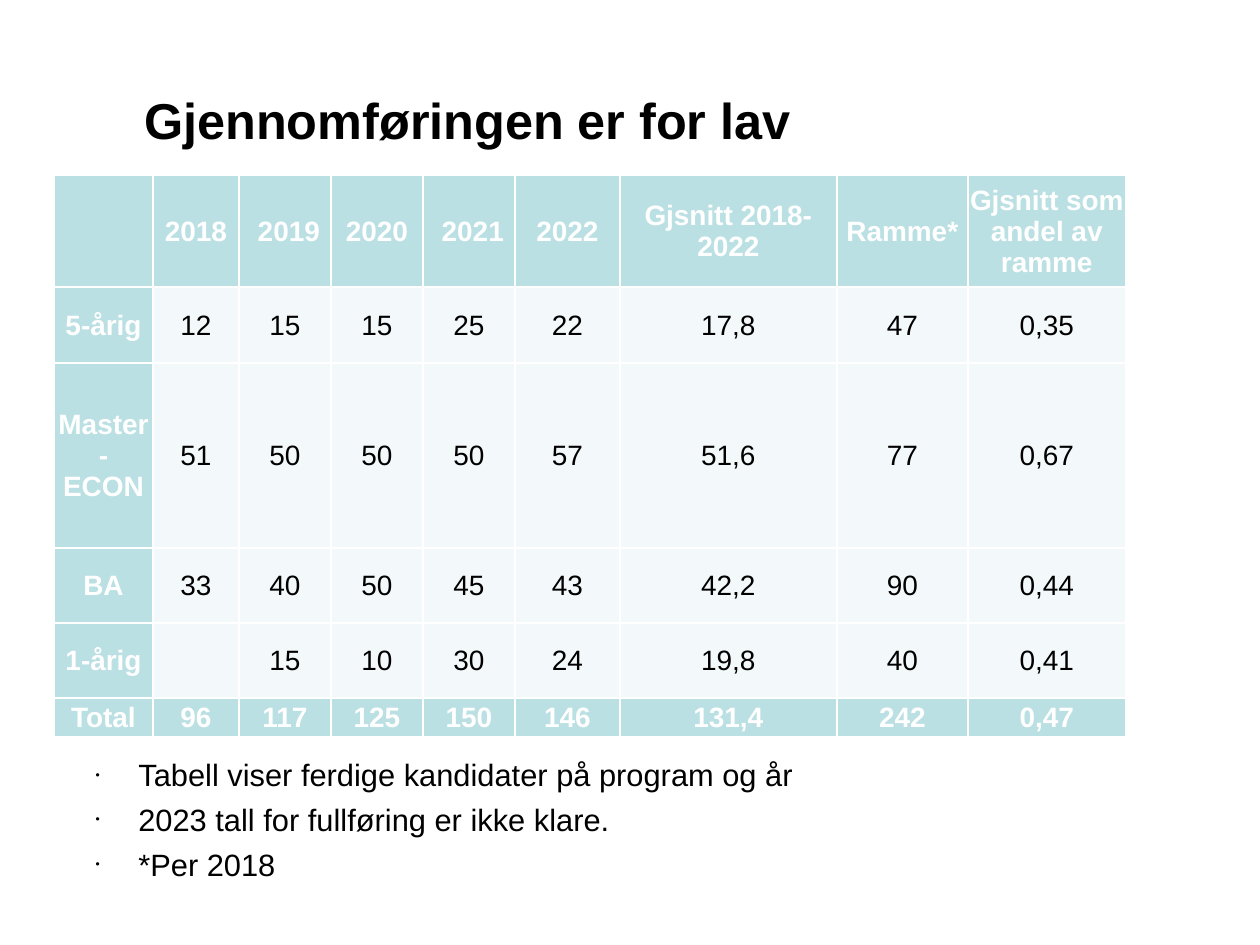
from dataclasses import dataclass
from itertools import product

from lxml import etree
from pptx import Presentation, util as u
from pptx.dml import color
from pptx.enum import text
from pptx.oxml import ns

EMU_PER_PX = u.Inches(1) / 126
FONT = "Arial"
COLORS = {"ink": "000000", "paper": "FFFFFF", "head": "BBE0E3", "body": "F3F9FA"}

COLUMN_WIDTHS = [99, 86, 92, 92, 92, 105, 217, 131, 158]
ROW_HEIGHTS = [112, 76, 185, 75, 75, 39]
ROWS = [
    ["", "2018", " 2019", "2020", " 2021", "2022", "Gjsnitt 2018-2022", "Ramme*",
     "Gjsnitt som andel av ramme"],
    ["5-årig", "12", "15", "15", "25", "22", "17,8", "47", "0,35"],
    ["Master - ECON", "51", "50", "50", "50", "57", "51,6", "77", "0,67"],
    ["BA", "33", "40", "50", "45", "43", "42,2", "90", "0,44"],
    ["1-årig", "", "15", "10", "30", "24", "19,8", "40", "0,41"],
    ["Total", "96", "117", "125", "150", "146", "131,4", "242", "0,47"],
]
LAST_ROW = len(ROWS) - 1


@dataclass
class TextBlock:
    left: int
    top: int
    width: int
    height: int
    lines: list[str]
    size: float
    bold: bool = False
    inset_top: int = 6
    bullet_indent: int = 0


TITLE = TextBlock(132, 86, 1061, 179, ["Gjennomføringen er for lav"], 28.8,
                  bold=True, inset_top=3)
NOTES = TextBlock(83, 750, 1158, 180, [
    "Tabell viser ferdige kandidater på program og år",
    "2023 tall for fullføring er ikke klare.",
    "*Per 2018",
], 17.6, bullet_indent=43)


def px(length: int) -> u.Emu:
    return u.Emu(round(length * EMU_PER_PX))


def rgb(name: str) -> color.RGBColor:
    return color.RGBColor.from_string(COLORS[name])


def add_element(parent, tag: str, **attributes: str):
    return etree.SubElement(parent, ns.qn(tag), attributes)


def set_font(para, size: float, ink: str, bold: bool) -> None:
    para.font.name = FONT
    para.font.size = u.Pt(size)
    para.font.bold = bold
    para.font.color.rgb = rgb(ink)


def add_bullet(para, indent: int) -> None:
    properties = para._p.get_or_add_pPr()
    properties.set("marL", str(px(indent)))
    properties.set("indent", str(-px(indent)))
    bullet_color = add_element(properties, "a:buClr")
    add_element(bullet_color, "a:srgbClr", val=COLORS["ink"])
    add_element(properties, "a:buSzPct", val="25000")
    add_element(properties, "a:buFont", typeface=FONT)
    add_element(properties, "a:buChar", char="●")


def draw_text(page, block: TextBlock) -> None:
    box = page.shapes.add_textbox(px(block.left), px(block.top),
                                  px(block.width), px(block.height))
    frame = box.text_frame
    frame.word_wrap = True
    frame.margin_top = px(block.inset_top)
    frame.text = "\n".join(block.lines)
    for index, para in enumerate(frame.paragraphs):
        if block.bullet_indent:
            add_bullet(para, block.bullet_indent)
        if index:
            para.space_before = u.Pt(4.5)
        set_font(para, block.size, "ink", block.bold)


def add_borders(cell, row: int) -> None:
    widths = {"L": 1, "R": 1,
              "T": 1.5 if row in (1, LAST_ROW) else 1,
              "B": 1.5 if row in (0, LAST_ROW - 1) else 1}
    properties = cell._tc.get_or_add_tcPr()
    for side, width in widths.items():
        line = add_element(properties, f"a:ln{side}", w=str(u.Pt(width)))
        fill = add_element(line, "a:solidFill")
        add_element(fill, "a:srgbClr", val=COLORS["paper"])


def draw_table(page, left: int, top: int) -> None:
    frame = page.shapes.add_table(len(ROW_HEIGHTS), len(COLUMN_WIDTHS), px(left), px(top),
                                  px(sum(COLUMN_WIDTHS)), px(sum(ROW_HEIGHTS)))
    table = frame.table
    table.horz_banding = False
    for column, width in zip(table.columns, COLUMN_WIDTHS):
        column.width = px(width)
    for row, height in zip(table.rows, ROW_HEIGHTS):
        row.height = px(height)
    for row, column in product(range(len(ROW_HEIGHTS)), range(len(COLUMN_WIDTHS))):
        cell = table.cell(row, column)
        heading = row in (0, LAST_ROW) or column == 0
        add_borders(cell, row)
        cell.fill.solid()
        cell.fill.fore_color.rgb = rgb("head" if heading else "body")
        cell.margin_left = cell.margin_right = cell.margin_top = px(1)
        cell.margin_bottom = 0
        cell.vertical_anchor = text.MSO_ANCHOR.MIDDLE
        cell.text = ROWS[row][column]
        para = cell.text_frame.paragraphs[0]
        para.alignment = text.PP_ALIGN.CENTER
        set_font(para, 16, "paper" if heading else "ink", heading)


def main() -> None:
    deck = Presentation()
    deck.slide_width, deck.slide_height = px(1260), px(945)
    page = deck.slides.add_slide(deck.slide_layouts[6])
    draw_text(page, TITLE)
    draw_text(page, NOTES)
    draw_table(page, 54, 175)
    deck.save("out.pptx")


if __name__ == "__main__":
    main()
